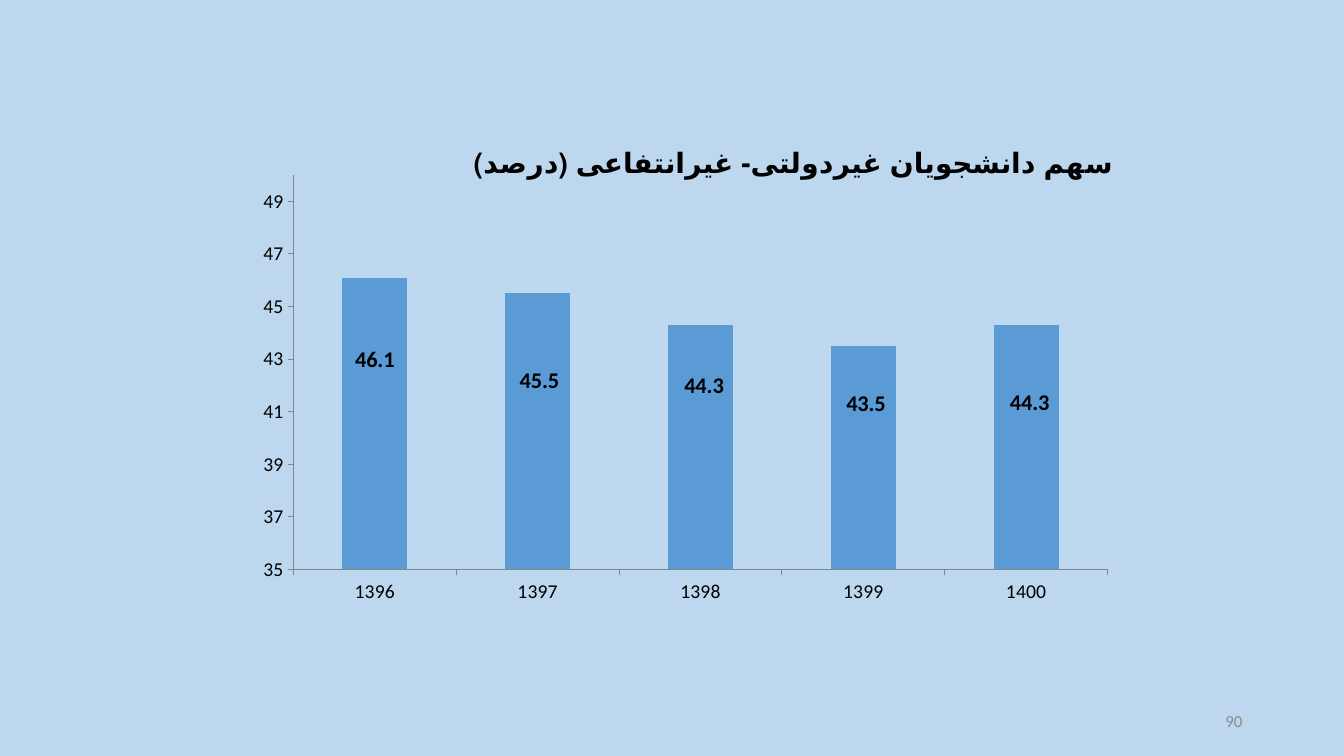
from lxml import etree
from pptx import Presentation
from pptx.chart.data import CategoryChartData
from pptx.dml.color import RGBColor
from pptx.enum.chart import XL_CHART_TYPE, XL_LABEL_POSITION, XL_TICK_MARK
from pptx.enum.text import MSO_ANCHOR, PP_ALIGN
from pptx.oxml.ns import qn
from pptx.util import Inches, Pt

COLUMN = XL_CHART_TYPE.COLUMN_CLUSTERED
OUTSIDE_END = XL_LABEL_POSITION.OUTSIDE_END
TICK_OUT = XL_TICK_MARK.OUTSIDE
MIDDLE = MSO_ANCHOR.MIDDLE
RIGHT = PP_ALIGN.RIGHT

FONT = "Calibri"
COLORS = {"background": "BDD7EE", "bar": "5B9BD5", "text": "000000",
          "axis": "868686", "number": "8C8C8C"}
TITLE = "سهم دانشجویان غیردولتی- غیرانتفاعی (درصد)"
SLIDE_NUMBER = "90"
SHARES = [
    ("1396", 46.1, (0, 19.6)),
    ("1397", 45.5, (0.2, 20.6)),
    ("1398", 44.3, (0.4, 15.5)),
    ("1399", 43.5, (0.3, 14.8)),
    ("1400", 44.3, (0.4, 18.8)),
]
CHART_BOX = (2.44, 1.03, 8.72, 5.06)
NUMBER_BOX = (9.42, 6.95, 3, 0.4)
EDGE_MODES = {"xMode": "edge", "yMode": "edge"}
TITLE_PERCENT = {"x": 25.3, "y": 7.4}
PLOT_PERCENT = {"x": 5.4, "y": 14, "w": 92.6, "h": 77.3}


def rgb(name):
    return RGBColor.from_string(COLORS[name])


def style_font(font, size, color="text", bold=False):
    font.name = FONT
    font.size = Pt(size)
    font.bold = bold
    font.color.rgb = rgb(color)


def set_layout(element, modes, percents, index):
    for old in element.findall(qn("c:layout")):
        element.remove(old)
    layout = etree.Element(qn("c:layout"))
    manual = etree.SubElement(layout, qn("c:manualLayout"))
    fractions = {tag: value / 100 for tag, value in percents.items()}
    for tag, value in {**modes, **fractions}.items():
        etree.SubElement(manual, qn("c:" + tag)).set("val", str(value))
    element.insert(index, layout)


def add_share_chart(slide):
    data = CategoryChartData(number_format="0.0")
    data.categories = [year for year, _, _ in SHARES]
    data.add_series("Series 1", [share for _, share, _ in SHARES])
    chart = slide.shapes.add_chart(COLUMN, *map(Inches, CHART_BOX), data).chart
    style_font(chart.font, 10)
    chart.has_legend = False

    chart.has_title = True
    p = chart.chart_title.text_frame.paragraphs[0]
    p._p.get_or_add_pPr().set("rtl", "1")
    r = p.add_run()
    r.text = TITLE
    style_font(r.font, 20, bold=True)
    chart.chart_title.include_in_layout = False
    set_layout(chart.chart_title._element, EDGE_MODES, TITLE_PERCENT, 1)

    for axis in (chart.category_axis, chart.value_axis):
        axis.has_major_gridlines = False
        axis.major_tick_mark = TICK_OUT
        axis.format.line.color.rgb = rgb("axis")
        axis.format.line.width = Pt(0.75)
        style_font(axis.tick_labels.font, 14)
    chart.value_axis.minimum_scale = 35
    chart.value_axis.maximum_scale = 50
    chart.value_axis.major_unit = 2
    chart.value_axis.tick_labels.number_format = "0"
    chart.value_axis.tick_labels.number_format_is_linked = False

    plot = chart.plots[0]
    plot.gap_width = 150
    plot.vary_by_categories = False
    plot_area = chart._chartSpace.chart.plotArea
    set_layout(plot_area, {"layoutTarget": "inner", **EDGE_MODES}, PLOT_PERCENT, 0)

    series = plot.series[0]
    series.format.fill.solid()
    series.format.fill.fore_color.rgb = rgb("bar")
    labels = series.data_labels
    labels.show_value = True
    labels.position = OUTSIDE_END
    style_font(labels.font, 16, bold=True)
    for leader in labels._element.findall(qn("c:showLeaderLines")):
        leader.set("val", "0")
    for i, (_, _, (dx, dy)) in enumerate(SHARES):
        label = series.points[i].data_label
        style_font(label.font, 16, bold=True)
        label.position = OUTSIDE_END
        element = labels._element.findall(qn("c:dLbl"))[i]
        set_layout(element, {}, {"x": dx, "y": dy}, 1)


def add_slide_number(slide):
    tf = slide.shapes.add_textbox(*map(Inches, NUMBER_BOX)).text_frame
    tf.word_wrap = True
    tf.vertical_anchor = MIDDLE
    p = tf.paragraphs[0]
    p.alignment = RIGHT
    r = p.add_run()
    r.text = SLIDE_NUMBER
    style_font(r.font, 12, "number")


def main():
    prs = Presentation()
    prs.slide_width, prs.slide_height = Inches(13.33), Inches(7.5)
    slide = prs.slides.add_slide(prs.slide_layouts[6])
    slide.background.fill.solid()
    slide.background.fill.fore_color.rgb = rgb("background")
    add_slide_number(slide)
    add_share_chart(slide)
    prs.save("out.pptx")


if __name__ == "__main__":
    main()
